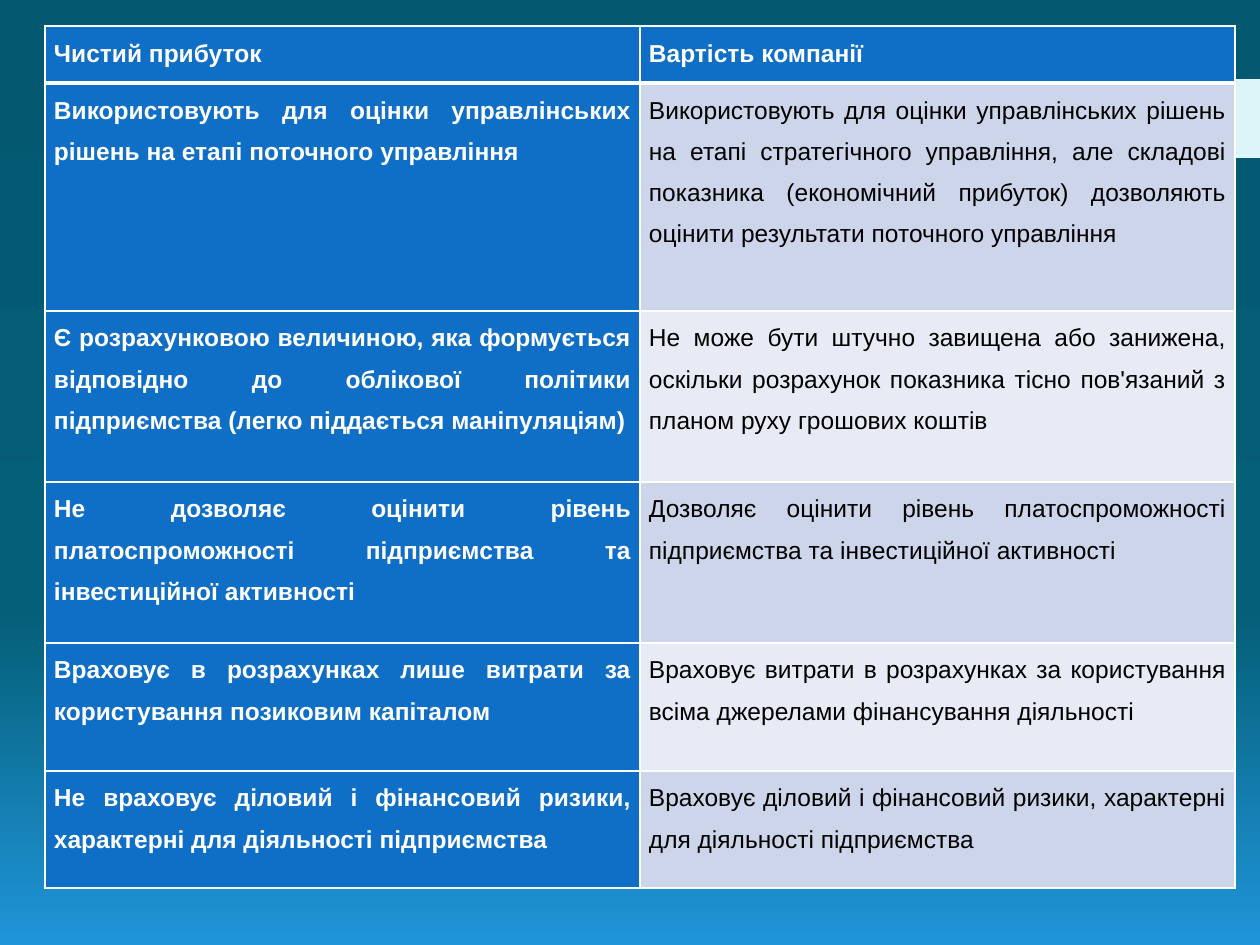
from copy import deepcopy

from lxml import etree
from pptx import Presentation
from pptx import util as u
from pptx.dml.color import RGBColor
from pptx.enum import shapes, text
from pptx.oxml.ns import qn

PX = 914400 / 126  # EMU per px
COLORS = {
    "blue": "0F6FC6", "band_dark": "CCD5EA", "band_light": "E7EBF5",
    "white": "FFFFFF", "black": "000000", "accent": "DBF5F9",
}
BACKGROUND = [(0, "045870"), (0.65, "045F78"), (1, "2095D9")]

# Content: net profit against company value
ROWS = [
    ("Чистий прибуток", "Вартість компанії"),
    ("Використовують для оцінки управлінських рішень на етапі поточного управління",
     "Використовують для оцінки управлінських рішень на етапі стратегічного управління, "
     "але складові показника (економічний прибуток) дозволяють оцінити результати "
     "поточного управління"),
    ("Є розрахунковою величиною, яка формується відповідно до облікової політики "
     "підприємства (легко піддається маніпуляціям)",
     "Не може бути штучно завищена або занижена, оскільки розрахунок показника тісно "
     "пов'язаний з планом руху грошових коштів"),
    ("Не дозволяє оцінити рівень платоспроможності підприємства та інвестиційної активності",
     "Дозволяє оцінити рівень платоспроможності підприємства та інвестиційної активності"),
    ("Враховує в розрахунках лише витрати за користування позиковим капіталом",
     "Враховує витрати в розрахунках за користування всіма джерелами фінансування діяльності"),
    ("Не враховує діловий і фінансовий ризики, характерні для діяльності підприємства",
     "Враховує діловий і фінансовий ризики, характерні для діяльності підприємства"),
]
ROW_HEIGHTS = [57, 228, 171, 161, 128, 117]
COL_WIDTH = 595
TABLE_LEFT, TABLE_TOP = 45, 26


def px(n):
    return u.Emu(round(n * PX))


def rgb(name):
    return RGBColor.from_string(COLORS[name])


def set_borders(cell, widths):
    tcPr = cell._tc.get_or_add_tcPr()
    for i, (side, width) in enumerate(widths.items()):
        ln = etree.Element(qn("a:ln" + side), w=str(u.Pt(width)))
        fill = etree.SubElement(ln, qn("a:solidFill"))
        etree.SubElement(fill, qn("a:srgbClr"), val=COLORS["white"])
        tcPr.insert(i, ln)


def fill_cell(cell, row, col, words):
    header, strong = row == 0, row == 0 or col == 0
    cell.margin_left = cell.margin_right = px(9)
    cell.margin_top = cell.margin_bottom = 0
    cell.fill.solid()
    band = "band_dark" if row % 2 else "band_light"
    cell.fill.fore_color.rgb = rgb("blue" if strong else band)
    set_borders(cell, {"L": 1, "R": 1, "T": 3 if row == 1 else 1, "B": 3 if header else 1})

    p = cell.text_frame.paragraphs[0]
    p.text = words
    p.alignment = text.PP_ALIGN.JUSTIFY
    p.line_spacing = 1.5
    p.font.name, p.font.size, p.font.bold = "Arial", u.Pt(14), strong
    p.font.color.rgb = rgb("white" if strong else "black")


prs = Presentation()
prs.slide_width, prs.slide_height = px(1260), px(945)
s = prs.slides.add_slide(prs.slide_layouts[6])

# Background gradient, top to bottom
bg = s.background.fill
bg.gradient()
bg.gradient_angle = 270
stop_list = s.background._cSld.find(".//" + qn("a:gsLst"))
stop_list.append(deepcopy(stop_list[0]))
for stop, (position, color) in zip(bg.gradient_stops, BACKGROUND):
    stop.position = position
    stop.color.rgb = RGBColor.from_string(color)

# Accent square at the right edge
accent = s.shapes.add_shape(shapes.MSO_SHAPE.RECTANGLE, px(1181), px(79), px(79), px(79))
accent.shadow.inherit = False
accent.fill.solid()
accent.fill.fore_color.rgb = rgb("accent")
accent.line.fill.background()

# Comparison table
table = s.shapes.add_table(len(ROWS), 2, px(TABLE_LEFT), px(TABLE_TOP),
                           px(2 * COL_WIDTH), px(sum(ROW_HEIGHTS))).table
for column in table.columns:
    column.width = px(COL_WIDTH)
for i, (height, row) in enumerate(zip(ROW_HEIGHTS, ROWS)):
    table.rows[i].height = px(height)
    for j, words in enumerate(row):
        fill_cell(table.cell(i, j), i, j, words)

prs.save("out.pptx")
